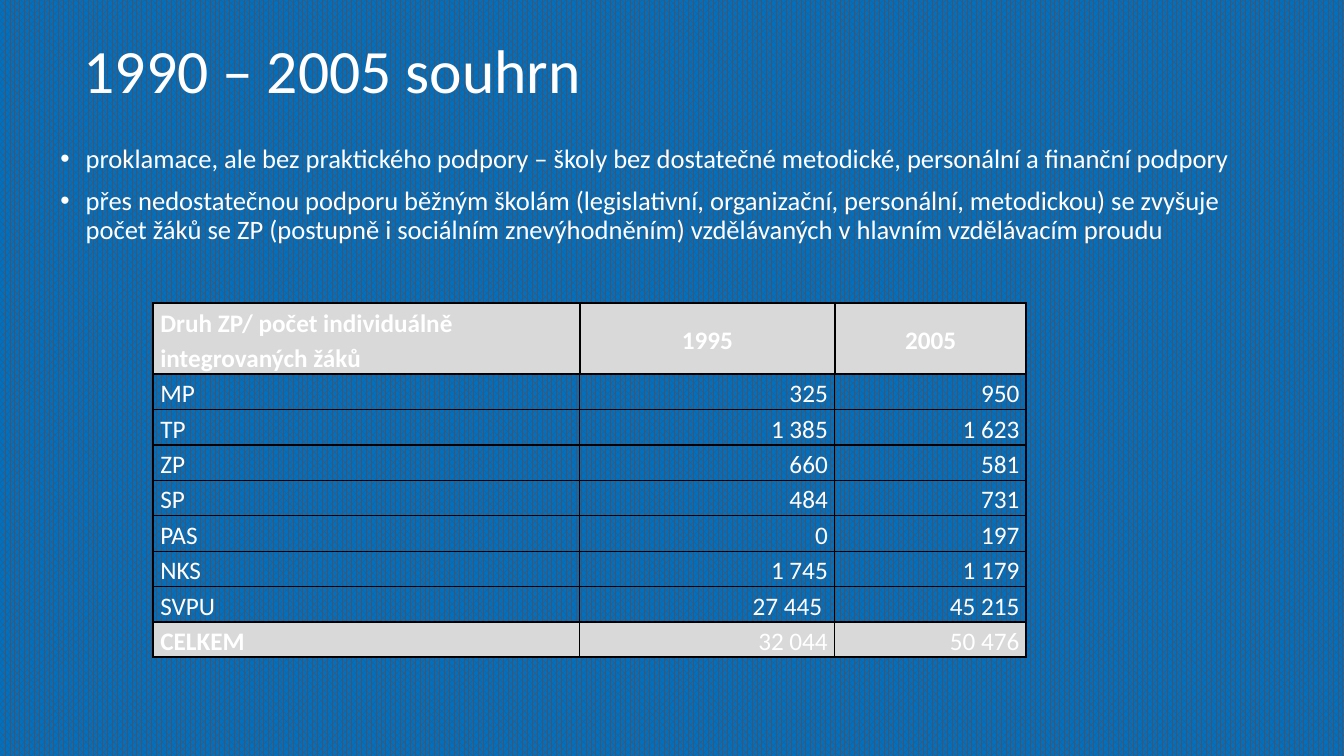
import dataclasses

import pptx
import pptx.dml.color
import pptx.enum.dml
import pptx.enum.text
import pptx.oxml
import pptx.oxml.ns
import pptx.util
from pptx.util import Inches, Pt

FONT = "Calibri"
WHITE = "FFFFFF"
GREY = "D9D9D9"
BLACK = "000000"
ALIGN = pptx.enum.text.PP_ALIGN
ANCHOR = pptx.enum.text.MSO_ANCHOR

TITLE = "1990 – 2005 souhrn"
BULLETS = [
    "proklamace, ale bez praktického podpory – školy bez dostatečné metodické, "
    "personální a finanční podpory",
    "přes nedostatečnou podporu běžným školám (legislativní, organizační, personální, "
    "metodickou) se zvyšuje počet žáků se ZP (postupně i sociálním znevýhodněním) "
    "vzdělávaných v hlavním vzdělávacím proudu",
]
COLUMN_WIDTHS = [4.23, 2.53, 1.9]
LINE_HEIGHT = 0.35


@dataclasses.dataclass
class PupilRow:
    label: str
    year_1995: str
    year_2005: str


PUPIL_ROWS = [
    PupilRow("Druh ZP/ počet individuálně integrovaných žáků", "1995", "2005"),
    PupilRow("MP", "325", "950"),
    PupilRow("TP", "1 385", "1 623"),
    PupilRow("ZP", "660", "581"),
    PupilRow("SP", "484", "731"),
    PupilRow("PAS", "0", "197"),
    PupilRow("NKS", "1 745", "1 179"),
    PupilRow("SVPU", "27 445 ", "45 215"),
    PupilRow("CELKEM", "32 044", "50 476"),
]


def color(value: str) -> pptx.dml.color.RGBColor:
    return pptx.dml.color.RGBColor.from_string(value)


def format_paragraph(paragraph, size: float, spacing: float, alignment=ALIGN.LEFT, bold=False) -> None:
    paragraph.alignment = alignment
    paragraph.line_spacing = spacing
    paragraph.font.name = FONT
    paragraph.font.size = Pt(size)
    paragraph.font.bold = bold
    paragraph.font.color.rgb = color(WHITE)


def place(shape, left: float, top: float, width: float, height: float) -> None:
    shape.left, shape.top = Inches(left), Inches(top)
    shape.width, shape.height = Inches(width), Inches(height)
    shape.text_frame.auto_size = pptx.enum.text.MSO_AUTO_SIZE.NONE


def set_borders(cell, widths: dict[str, float]) -> None:
    """Draw black cell edges; widths maps L, R, T and B, in that order, to points."""
    properties = cell._tc.get_or_add_tcPr()
    for position, (side, width) in enumerate(widths.items()):
        line = pptx.oxml.parse_xml(
            f'<a:ln{side} {pptx.oxml.ns.nsdecls("a")} w="{Pt(width)}">'
            f'<a:solidFill><a:srgbClr val="{BLACK}"/></a:solidFill></a:ln{side}>'
        )
        properties.insert(position, line)


def set_background(slide) -> None:
    fill = slide.background.fill
    fill.patterned()
    fill.pattern = pptx.enum.dml.MSO_PATTERN.PERCENT_70
    fill.fore_color.rgb = color("44546A")
    fill.back_color.rgb = color("0070C0")


def add_title(slide) -> None:
    title = slide.shapes.title
    place(title, 0.73, 0.3, 10.43, 0.85)
    title.text_frame.text = TITLE
    title.text_frame.vertical_anchor = ANCHOR.MIDDLE
    format_paragraph(title.text_frame.paragraphs[0], 44, 0.9)


def add_bullets(slide) -> None:
    body = slide.placeholders[1]
    place(body, 0.5, 1.39, 11.89, 5.91)
    body.text_frame.text = "\n".join(BULLETS)
    for paragraph in body.text_frame.paragraphs:
        format_paragraph(paragraph, 19, 0.9)
        paragraph.space_before = Pt(10)
        properties = paragraph._p.get_or_add_pPr()
        properties.set("marL", str(Inches(0.25)))
        properties.set("indent", str(Inches(-0.25)))


def format_cell(cell, row: int, column: int) -> None:
    last_row, last_column = len(PUPIL_ROWS) - 1, len(COLUMN_WIDTHS) - 1
    header, total = row == 0, row == last_row
    cell.margin_left = cell.margin_right = Inches(0.07)
    cell.margin_top = cell.margin_bottom = 0
    if header or total:
        cell.fill.solid()
        cell.fill.fore_color.rgb = color(GREY)
    else:
        cell.fill.background()
    alignment = ALIGN.LEFT
    if column > 0:
        alignment = ALIGN.CENTER if header else ALIGN.RIGHT
        cell.vertical_anchor = ANCHOR.MIDDLE if header else ANCHOR.TOP
    bold = header or (total and column == 0)
    format_paragraph(cell.text_frame.paragraphs[0], 18, 1.15, alignment, bold)
    thick_edges = {
        "L": header or column == 0,
        "R": header or column == last_column,
        "T": row <= 1 or total,
        "B": header or row >= last_row - 1,
    }
    set_borders(cell, {side: 1.5 if thick else 1 for side, thick in thick_edges.items()})


def add_pupil_table(slide) -> None:
    frame = slide.shapes.add_table(
        len(PUPIL_ROWS), len(COLUMN_WIDTHS), Inches(1.52), Inches(3.01),
        Inches(sum(COLUMN_WIDTHS)), Inches(LINE_HEIGHT * (len(PUPIL_ROWS) + 1)),
    )
    table = frame.table
    table.first_row = table.horz_banding = False
    for column, width in zip(table.columns, COLUMN_WIDTHS):
        column.width = Inches(width)
    for row_index, pupil_row in enumerate(PUPIL_ROWS):
        lines = 2 if row_index == 0 else 1
        table.rows[row_index].height = Inches(LINE_HEIGHT * lines)
        for column_index, text in enumerate(dataclasses.astuple(pupil_row)):
            cell = table.cell(row_index, column_index)
            cell.text = text
            format_cell(cell, row_index, column_index)


def main() -> None:
    presentation = pptx.Presentation()
    presentation.slide_width, presentation.slide_height = Inches(13.33), Inches(7.5)
    slide = presentation.slides.add_slide(presentation.slide_layouts[1])
    set_background(slide)
    add_title(slide)
    add_bullets(slide)
    add_pupil_table(slide)
    presentation.save("out.pptx")


if __name__ == "__main__":
    main()
